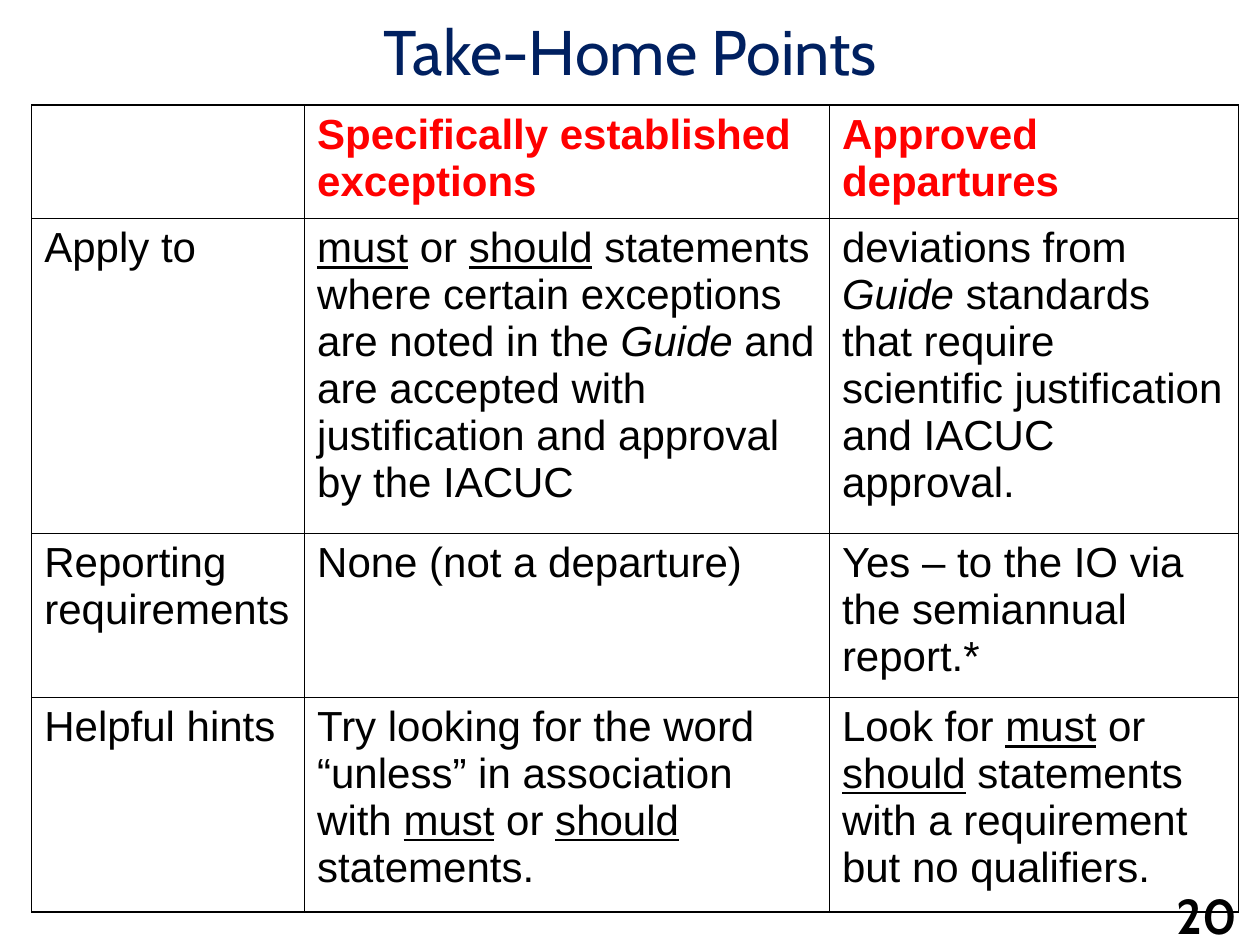
from lxml.etree import SubElement
from pptx import Presentation
from pptx.dml.color import RGBColor
from pptx.enum.text import MSO_ANCHOR, PP_ALIGN
from pptx.oxml.ns import qn
from pptx.util import Cm, Pt

NAVY = RGBColor(0x00, 0x20, 0x60)
RED = RGBColor(0xFF, 0x00, 0x00)
BLACK = RGBColor(0x00, 0x00, 0x00)

# Run styles
U, I = "underline", "italic"

MUST_OR_SHOULD = [("must", U), " or ", ("should", U)]

COL_WIDTHS = [5.5, 10.58, 8.25]
ROW_HEIGHTS = [2.25, 6.25, 3.25, 4.25]
ROWS = [
    [[], ["Specifically established exceptions"], ["Approved departures"]],
    [["Apply to"],
     MUST_OR_SHOULD + [" statements where certain exceptions are noted in the ",
                       ("Guide", I),
                       " and are accepted with justification and approval by the IACUC"],
     ["deviations from ", ("Guide ", I),
      "standards that require scientific justification and IACUC approval."]],
    [["Reporting requirements"], ["None (not a departure)"],
     ["Yes – to the IO via the semiannual report.*"]],
    [["Helpful hints"],
     ["Try looking for the word “unless” in association with "]
     + MUST_OR_SHOULD + [" statements."],
     ["Look for "] + MUST_OR_SHOULD
     + [" statements with a requirement but no qualifiers."]],
]


class SlideBuilder:
    heading_font = "Cabin"
    body_font = "Arial"
    body_size = 24

    def __init__(self, prs):
        self.s = prs.slides.add_slide(prs.slide_layouts[6])

    def run(self, p, text, font, size, color, bold=False, style=None):
        r = p.add_run()
        r.text = text
        f = r.font
        f.name, f.size, f.bold = font, Pt(size), bold
        f.color.rgb = color
        f.underline = style == U
        f.italic = style == I

    def heading(self, text, box, size, color, anchor, bold=False, inset=None):
        sp = self.s.shapes.add_textbox(*[Cm(v) for v in box])
        tf = sp.text_frame
        tf.word_wrap = True
        tf.vertical_anchor = anchor
        if inset is not None:
            tf.margin_left = tf.margin_right = Cm(inset)
            tf.margin_top = tf.margin_bottom = Cm(inset)
        p = tf.paragraphs[0]
        p.alignment = PP_ALIGN.CENTER
        self.run(p, text, self.heading_font, size, color, bold)

    def borders(self, cell):
        tcPr = cell._tc.get_or_add_tcPr()
        for i, side in enumerate(("lnL", "lnR", "lnT", "lnB")):
            ln = tcPr.makeelement(qn(f"a:{side}"), {"w": str(Pt(1))})
            fill = SubElement(ln, qn("a:solidFill"))
            SubElement(fill, qn("a:srgbClr"), val=str(BLACK))
            tcPr.insert(i, ln)

    def table(self, left, top, widths, heights, rows):
        tbl = self.s.shapes.add_table(
            len(rows), len(widths), Cm(left), Cm(top),
            Cm(sum(widths)), Cm(sum(heights))).table
        tbl.first_row = tbl.horz_banding = False
        for col, width in zip(tbl.columns, widths):
            col.width = Cm(width)
        for i, (row, height) in enumerate(zip(rows, heights)):
            tbl.rows[i].height = Cm(height)
            header = i == 0
            for j, runs in enumerate(row):
                cell = tbl.cell(i, j)
                cell.fill.background()
                self.borders(cell)
                p = cell.text_frame.paragraphs[0]
                for item in runs:
                    text, style = (item, None) if isinstance(item, str) else item
                    self.run(p, text, self.body_font, self.body_size,
                             RED if header else BLACK, header, style)


def main():
    prs = Presentation()
    prs.slide_width, prs.slide_height = Cm(25.4), Cm(19.05)
    slide = SlideBuilder(prs)

    # Title
    slide.heading("Take-Home Points", (0.85, -0.2, 23.7, 2.1), 36, NAVY,
                  MSO_ANCHOR.BOTTOM)

    # Comparison table
    slide.table(0.64, 2.12, COL_WIDTHS, ROW_HEIGHTS, ROWS)

    # Slide number
    slide.heading("20", (23.3, 17.83, 2.05, 1.22), 28, BLACK,
                  MSO_ANCHOR.MIDDLE, bold=True, inset=0.13)

    prs.save("out.pptx")


if __name__ == "__main__":
    main()
